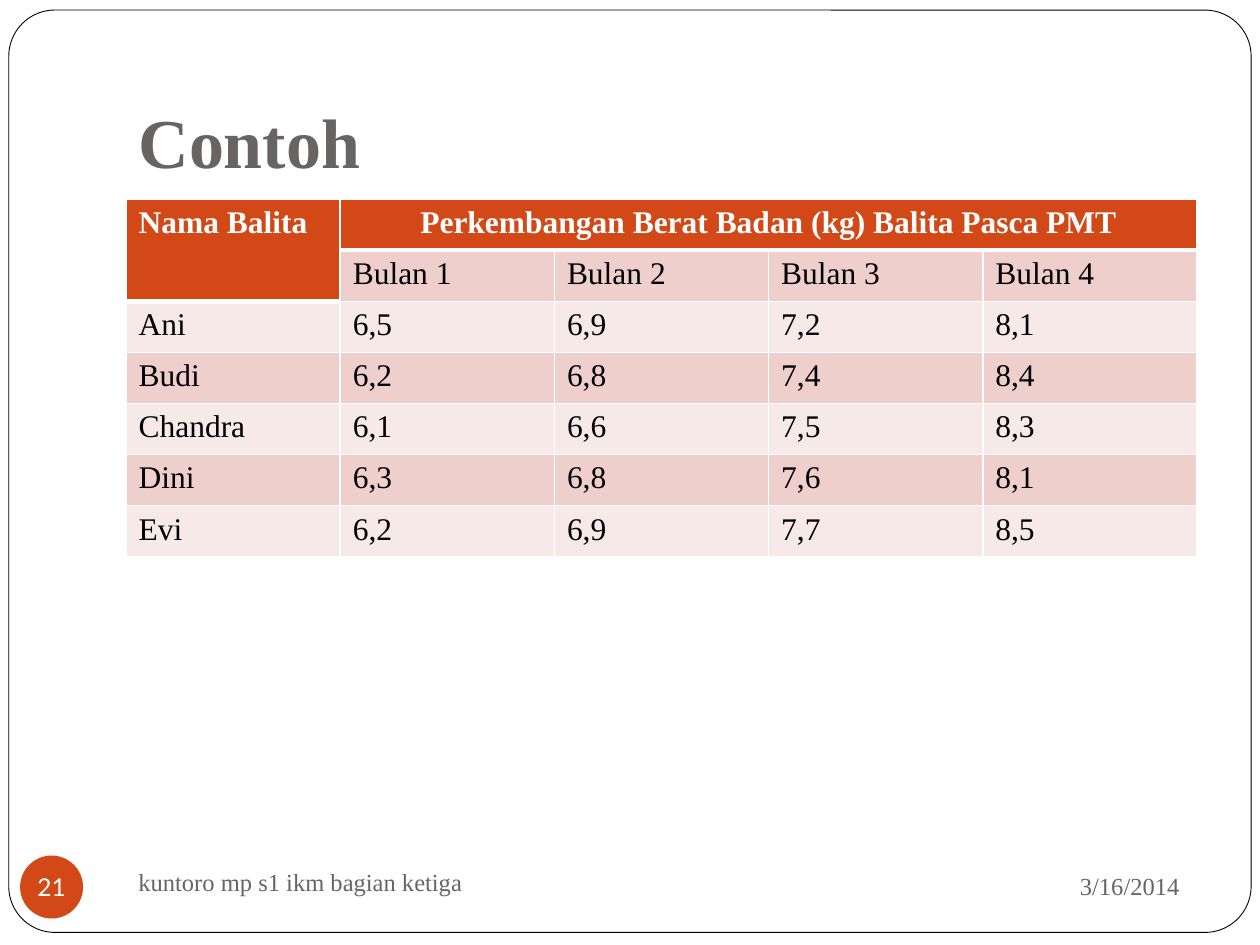
"""Build the slide with the table of toddlers' weight over four months."""
from lxml.etree import SubElement
from pptx import Presentation
from pptx.dml.color import RGBColor
from pptx.enum.shapes import MSO_SHAPE
from pptx.enum.text import MSO_ANCHOR, PP_ALIGN
from pptx.oxml import parse_xml
from pptx.oxml.ns import nsdecls, qn
from pptx.util import Inches, Pt


def color(value):
    return RGBColor.from_string(value)


def write(frame, text, size, ink, bold=False, align=PP_ALIGN.LEFT, font="Times New Roman"):
    frame.text = text
    paragraph = frame.paragraphs[0]
    paragraph.alignment = align
    for span in paragraph.runs:
        span.font.name = font
        span.font.size = Pt(size)
        span.font.bold = bold
        span.font.color.rgb = color(ink)


GRAY, ORANGE, WHITE, BLACK = "696464", "D34817", "FFFFFF", "000000"
BANDS = ["F7E9E8", "EFCFCC"]

deck = Presentation()
deck.slide_width, deck.slide_height = Inches(10), Inches(7.5)
page = deck.slides.add_slide(deck.slide_layouts[5])

title = page.shapes.title
title.left, title.top, title.width, title.height = Inches(1), Inches(0.3), Inches(8.5), Inches(1.25)
title.text_frame.vertical_anchor = MSO_ANCHOR.BOTTOM
title.text_frame.margin_bottom = Inches(0.1)
write(title.text_frame, "Contoh", 40, GRAY, bold=True)

border = page.shapes.add_shape(
    MSO_SHAPE.ROUNDED_RECTANGLE, Inches(0.07), Inches(0.08), Inches(9.86), Inches(7.32))
border.adjustments[0] = 0.05
border.shadow.inherit = False
border.fill.solid()
border.fill.fore_color.rgb = color(WHITE)
border.line.color.rgb = color(BLACK)
border.line.width = Pt(0.5)
title.element.addprevious(border.element)

footers = [
    ("3/16/2014", 6.75, 6.77, 2.71, 0.52, PP_ALIGN.RIGHT),
    ("kuntoro mp s1 ikm bagian ketiga", 1, 6.75, 4.33, 0.5, PP_ALIGN.LEFT),
]
for text, left, top, width, height, align in footers:
    box = page.shapes.add_textbox(Inches(left), Inches(top), Inches(width), Inches(height))
    box.text_frame.word_wrap = True
    box.text_frame.vertical_anchor = MSO_ANCHOR.MIDDLE
    write(box.text_frame, text, 14, GRAY, align=align)

badge = page.shapes.add_shape(
    MSO_SHAPE.OVAL, Inches(0.16), Inches(6.79), Inches(0.5), Inches(0.5))
badge.shadow.inherit = False
badge.fill.solid()
badge.fill.fore_color.rgb = color(ORANGE)
badge.line.fill.background()
frame = badge.text_frame
frame.margin_left = frame.margin_right = frame.margin_top = frame.margin_bottom = 0
frame.word_wrap = False
frame.vertical_anchor = MSO_ANCHOR.MIDDLE
write(frame, "21", 14, WHITE, align=PP_ALIGN.CENTER, font="Lato")

rows = [
    ["Nama Balita", "Perkembangan Berat Badan (kg) Balita Pasca PMT", "", "", ""],
    ["", "Bulan 1", "Bulan 2", "Bulan 3", "Bulan 4"],
    ["Ani", "6,5", "6,9", "7,2", "8,1"],
    ["Budi", "6,2", "6,8", "7,4", "8,4"],
    ["Chandra", "6,1", "6,6", "7,5", "8,3"],
    ["Dini", "6,3", "6,8", "7,6", "8,1"],
    ["Evi", "6,2", "6,9", "7,7", "8,5"],
]
table = page.shapes.add_table(
    len(rows), len(rows[0]), Inches(1), Inches(1.58), Inches(8.5), Inches(2.84)).table
table.cell(0, 0).merge(table.cell(1, 0))
table.cell(0, 1).merge(table.cell(0, 4))

for r, row in enumerate(rows):
    for c, text in enumerate(row):
        cell = table.cell(r, c)
        header = r == 0 or (r == 1 and c == 0)
        below_header = r == (2 if c == 0 else 1)
        cell.fill.solid()
        cell.fill.fore_color.rgb = color(ORANGE if header else BANDS[r % 2])
        if text:
            write(cell.text_frame, text, 18, WHITE if header else BLACK, bold=header,
                  align=PP_ALIGN.CENTER if r == 0 and c else PP_ALIGN.LEFT)
        widths = {"lnL": 1, "lnR": 1, "lnT": 3 if below_header else 1, "lnB": 3 if header else 1}
        properties = cell._tc.get_or_add_tcPr()
        for position, (side, width) in enumerate(widths.items()):
            line = parse_xml(f'<a:{side} {nsdecls("a")} w="{Pt(width)}"/>')
            fill = SubElement(line, qn("a:solidFill"))
            SubElement(fill, qn("a:srgbClr"), val=WHITE)
            properties.insert(position, line)

deck.save("out.pptx")
